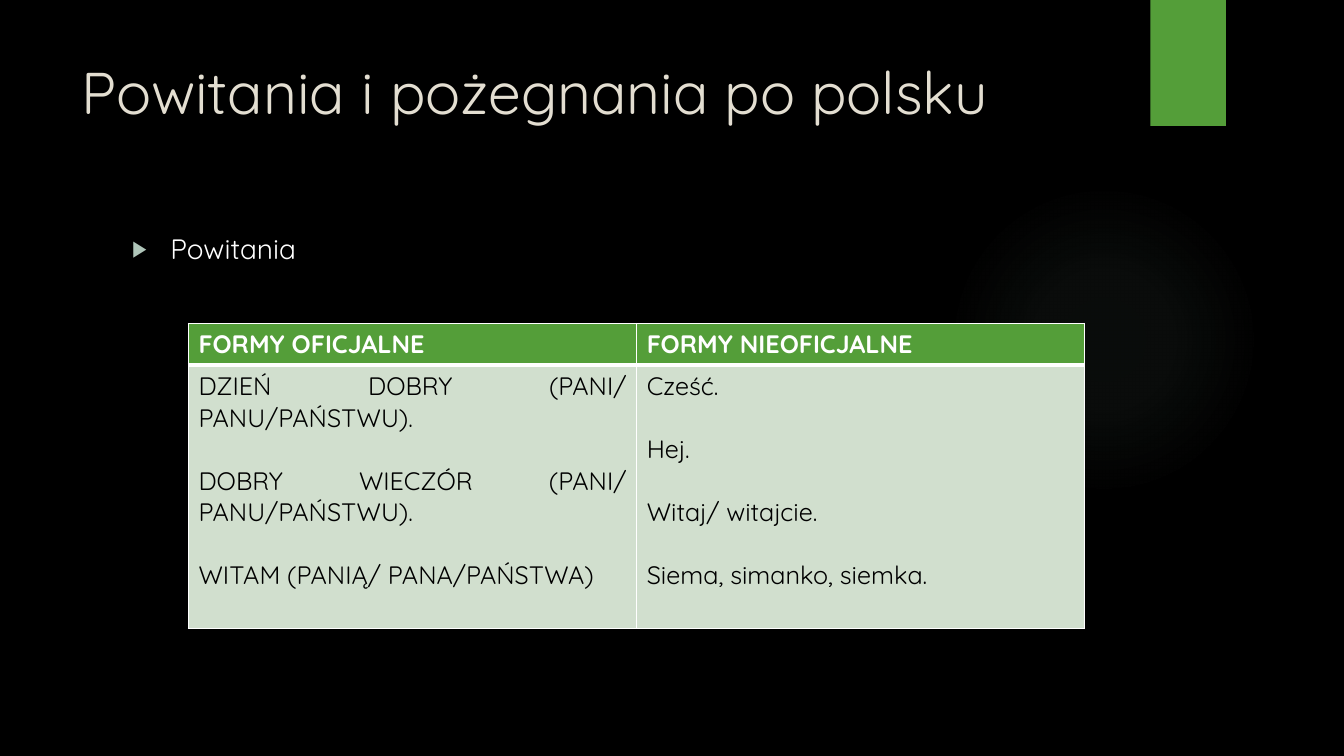
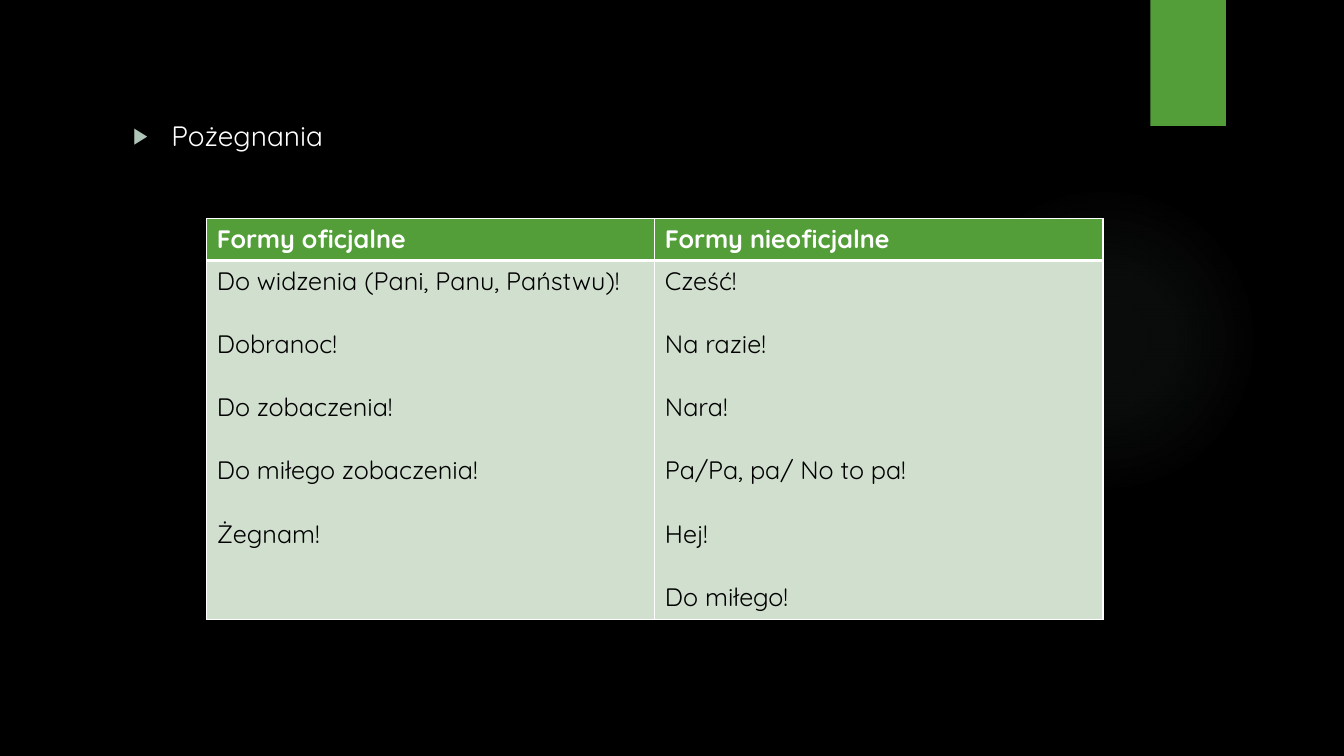
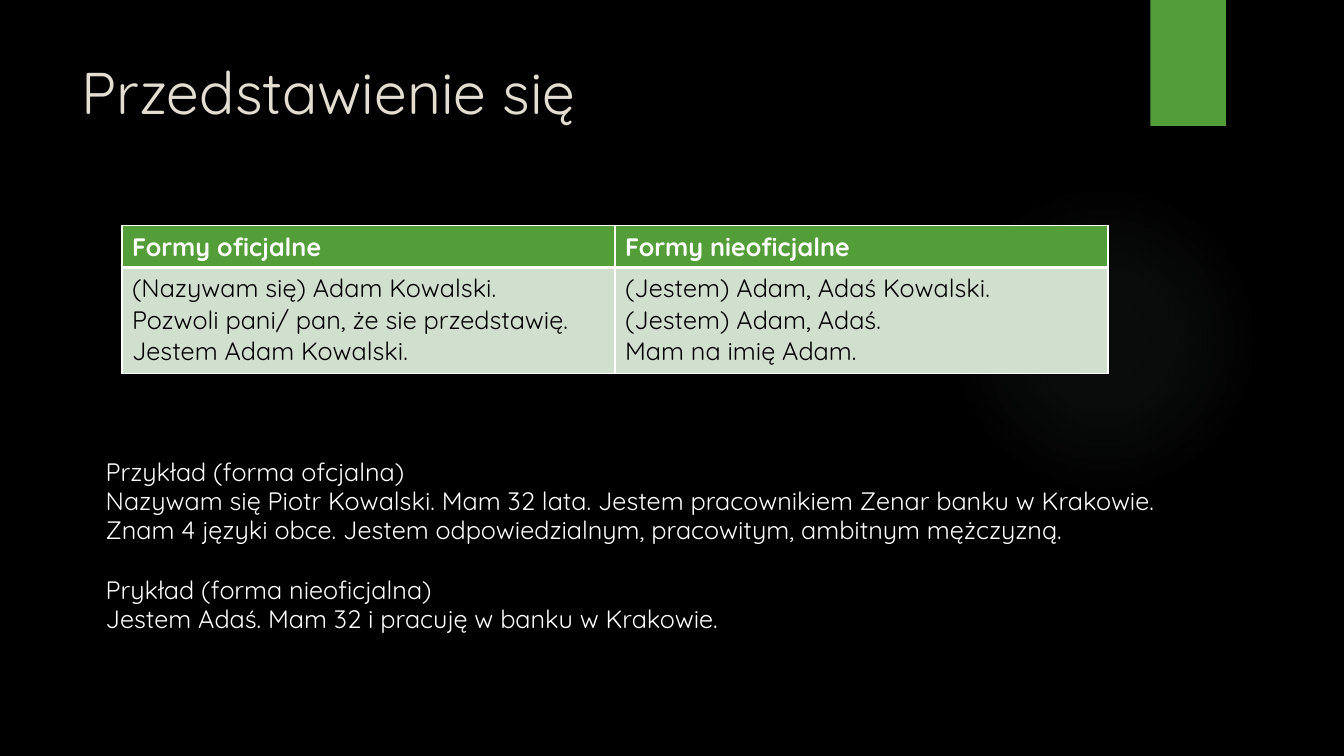
from pptx import Presentation
from pptx.dml.color import RGBColor
from pptx.enum.shapes import MSO_SHAPE
from pptx.enum.text import MSO_ANCHOR, MSO_AUTO_SIZE, PP_ALIGN
from pptx.oxml import parse_xml
from pptx.oxml.ns import nsdecls, qn
from pptx.util import Inches, Pt

OVAL, RECT = MSO_SHAPE.OVAL, MSO_SHAPE.RECTANGLE
LEFT, FULL = PP_ALIGN.LEFT, PP_ALIGN.JUSTIFY
TOP, FIXED = MSO_ANCHOR.TOP, MSO_AUTO_SIZE.NONE

BLACK = RGBColor(0, 0, 0)
WHITE = RGBColor(255, 255, 255)
GREEN = RGBColor(0x54, 0x9E, 0x39)
PALE = RGBColor(0xD1, 0xDF, 0xCE)
CREAM = RGBColor(0xE3, 0xDE, 0xD1)
MINT = RGBColor(0xAF, 0xC5, 0xB9)
GLOW = RGBColor(0x87, 0xA8, 0x96)

FONT = "Quicksand"
LINE = 22.5
HEAD = 0.41
TITLES = ("Formy oficjalne", "Formy nieoficjalne")


def node(text):
    return parse_xml(text.replace(" NS", " " + nsdecls("a"), 1))


def put(frame, lines, size=18, color=WHITE, bold=False, align=LEFT, gap=0, lead=1.0):
    frame.word_wrap = True
    for i, line in enumerate(lines):
        para = frame.add_paragraph() if i else frame.paragraphs[0]
        para.alignment = align
        para.space_before = Pt(gap if i else 0)
        para.line_spacing = lead
        run = para.add_run()
        run.text = line
        font = run.font
        font.name, font.size, font.bold = FONT, Pt(size), bold
        font.color.rgb = color


def place(shape, left, top, width, height):
    shape.left, shape.top = Inches(left), Inches(top)
    shape.width, shape.height = Inches(width), Inches(height)
    shape.text_frame.vertical_anchor = TOP
    shape.text_frame.auto_size = FIXED


def title(slide, text):
    shape = slide.shapes.title
    place(shape, 0.71, 0.5, 10.29, 1.53)
    put(shape.text_frame, [text], size=42, color=CREAM)


def bullet(slide, text, left, top):
    shape = slide.placeholders[1]
    place(shape, left, top, 9.78, 4.59)
    put(shape.text_frame, [text], size=20)
    props = shape.text_frame.paragraphs[0]._p.get_or_add_pPr()
    props.set("marL", str(Inches(0.38)))
    props.set("indent", str(Inches(-0.38)))
    for part in (
        f'<a:buClr NS><a:srgbClr val="{MINT}"/></a:buClr>',
        '<a:buSzPct NS val="80000"/>',
        '<a:buFont NS typeface="Arial"/>',
        '<a:buChar NS char="▶"/>',
    ):
        props.append(node(part))


def border(cell, **widths):
    props = cell._tc.get_or_add_tcPr()
    for i, side in enumerate("LRTB"):
        width = Pt(widths.get(side, 1))
        props.insert(i, node(
            f'<a:ln{side} NS w="{width}"><a:solidFill>'
            f'<a:srgbClr val="{WHITE}"/></a:solidFill></a:ln{side}>'))


def table(slide, left, top, width, height, heads, cols, align=LEFT, gap=0):
    grid = slide.shapes.add_table(
        2, 2, Inches(left), Inches(top), Inches(width), Inches(height)).table
    grid.horz_banding = False
    grid.rows[0].height = Inches(HEAD)
    grid.rows[1].height = Inches(height - HEAD)
    for i, (head, lines) in enumerate(zip(heads, cols)):
        for row, fill in enumerate((GREEN, PALE)):
            cell = grid.cell(row, i)
            cell.fill.solid()
            cell.fill.fore_color.rgb = fill
            border(cell, **({"T": 3} if row else {"B": 3}))
        put(grid.cell(0, i).text_frame, [head], bold=True, align=align)
        put(grid.cell(1, i).text_frame, lines, color=BLACK, align=align, gap=gap)


def decor(slide, master):
    master.background.fill.solid()
    master.background.fill.fore_color.rgb = BLACK
    glow = slide.shapes.add_shape(
        OVAL, Inches(9.41), Inches(1.83), Inches(3.08), Inches(3.08))
    band = slide.shapes.add_shape(
        RECT, Inches(11.41), 0, Inches(0.75), Inches(1.25))
    band.fill.solid()
    band.fill.fore_color.rgb = GREEN
    glow.fill.background()
    stops = "".join(
        f'<a:gs pos="{pos}000"><a:srgbClr val="{GLOW}">'
        f'<a:alpha val="{alpha}000"/></a:srgbClr></a:gs>'
        for pos, alpha in ((0, 7), (36, 6), (69, 0), (100, 0)))
    props = glow.element.spPr
    props.replace(props.find(qn("a:noFill")), node(
        f'<a:gradFill NS><a:gsLst>{stops}</a:gsLst><a:path path="circle">'
        '<a:fillToRect l="50000" t="50000" r="50000" b="50000"/>'
        '</a:path></a:gradFill>'))
    for i, shape in enumerate((glow, band)):
        shape.shadow.inherit = False
        shape.line.fill.background()
        shape.element.nvSpPr.cNvPr.set("id", str(101 + i))
        master.shapes.element.insert(2 + i, shape.element)


def greet(slide):
    title(slide, "Powitania i pożegnania po polsku")
    bullet(slide, "Powitania", 1.21, 2.25)
    table(slide, 1.87, 3.21, 8.89, 3.02, [head.upper() for head in TITLES], (
        ("DZIEŃ DOBRY (PANI/ PANU/PAŃSTWU).",
         "DOBRY WIECZÓR (PANI/ PANU/PAŃSTWU).",
         "WITAM (PANIĄ/ PANA/PAŃSTWA)"),
        ("Cześć.", "Hej.", "Witaj/ witajcie.", "Siema, simanko, siemka."),
    ), align=FULL, gap=LINE)


def leave(slide):
    holder = slide.shapes.title.element
    holder.getparent().remove(holder)
    bullet(slide, "Pożegnania", 1.22, 1.13)
    table(slide, 2.05, 2.17, 8.89, 3.97, TITLES, (
        ("Do widzenia (Pani, Panu, Państwu)!", "Dobranoc!", "Do zobaczenia!",
         "Do miłego zobaczenia!", "Żegnam!"),
        ("Cześć!", "Na razie!", "Nara!", "Pa/Pa, pa/ No to pa!", "Hej!",
         "Do miłego!"),
    ), gap=LINE)


def present(slide):
    title(slide, "Przedstawienie się")
    table(slide, 1.21, 2.24, 9.78, 1.46, TITLES, (
        ("(Nazywam się) Adam Kowalski.",
         "Pozwoli pani/ pan, że sie przedstawię.",
         "Jestem Adam Kowalski."),
        ("(Jestem) Adam, Adaś Kowalski.", "(Jestem) Adam, Adaś.",
         "Mam na imię Adam."),
    ))
    box = slide.shapes.add_textbox(
        Inches(0.95), Inches(4.49), Inches(10.84), Inches(2.22))
    put(box.text_frame, (
        "Przykład (forma ofcjalna)",
        "Nazywam się Piotr Kowalski. Mam 32 lata. Jestem pracownikiem Zenar "
        "banku w Krakowie. Znam 4 języki obce. Jestem odpowiedzialnym, "
        "pracowitym, ambitnym mężczyzną.",
        "Prykład (forma nieoficjalna)",
        "Jestem Adaś. Mam 32 i pracuję w banku w Krakowie.",
    ), lead=0.97)
    box.text_frame.paragraphs[2].space_before = Pt(LINE * 0.97)


def main():
    prs = Presentation()
    prs.slide_width, prs.slide_height = Inches(13.33), Inches(7.5)
    for fill, kind in ((greet, 1), (leave, 1), (present, 5)):
        slide = prs.slides.add_slide(prs.slide_layouts[kind])
        if fill is greet:
            decor(slide, prs.slide_master)
        fill(slide)
    prs.save("out.pptx")


if __name__ == "__main__":
    main()
